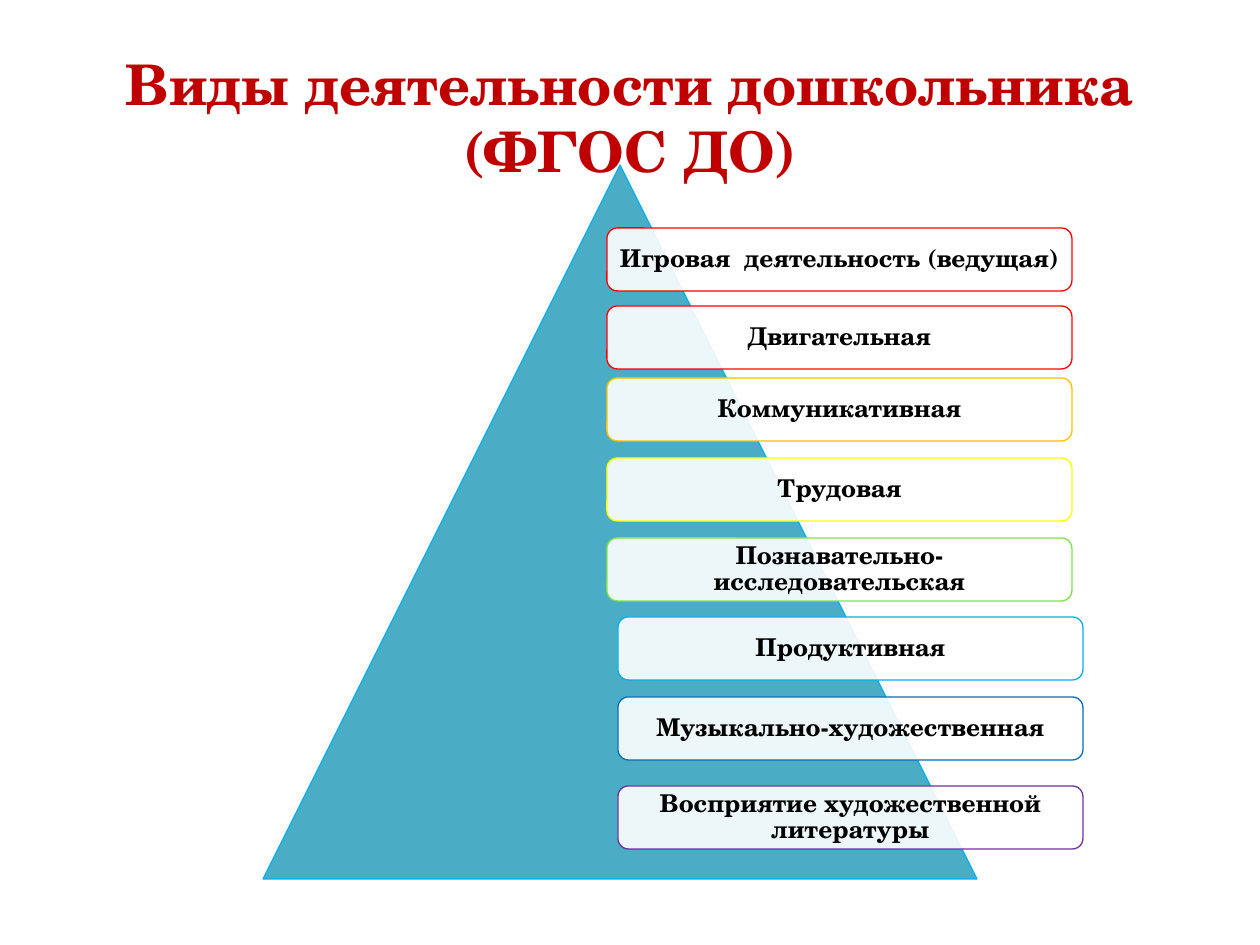
from lxml.etree import SubElement
from pptx import Presentation
from pptx.dml.color import RGBColor
from pptx.enum.shapes import MSO_SHAPE as Preset
from pptx.enum.text import MSO_ANCHOR as Anchor, PP_ALIGN as Align
from pptx.oxml.ns import qn
from pptx.util import Emu, Pt

PX_PER_INCH = 126
WHITE = RGBColor(0xFF, 0xFF, 0xFF)
BLACK = RGBColor(0x00, 0x00, 0x00)
CRIMSON = RGBColor(0xC0, 0x00, 0x00)
TEAL = RGBColor(0x4B, 0xAC, 0xC6)
RED = RGBColor(0xFF, 0x00, 0x00)
ORANGE = RGBColor(0xFF, 0xC0, 0x00)
YELLOW = RGBColor(0xFF, 0xFF, 0x00)
GREEN = RGBColor(0x80, 0xE4, 0x46)
SKY = RGBColor(0x00, 0xB0, 0xF0)
BLUE = RGBColor(0x00, 0x70, 0xC0)
PURPLE = RGBColor(0x70, 0x30, 0xA0)

UPPER_LEFT, LOWER_LEFT = 607, 618
ACTIVITIES = [
    ("Игровая  деятельность (ведущая)", UPPER_LEFT, 228, RED),
    ("Двигательная", UPPER_LEFT, 306, RED),
    ("Коммуникативная", UPPER_LEFT, 378, ORANGE),
    ("Трудовая", UPPER_LEFT, 458, YELLOW),
    ("Познавательно-исследовательская", UPPER_LEFT, 538, GREEN),
    ("Продуктивная", LOWER_LEFT, 617, SKY),
    ("Музыкально-художественная", LOWER_LEFT, 697, BLUE),
    ("Восприятие художественной литературы", LOWER_LEFT, 786, PURPLE),
]


def px(length):
    return Emu(round(length * 914400 / PX_PER_INCH))


def assign(target, values):
    for name, value in values.items():
        setattr(target, name, value)


class SlideBuilder:
    font = {"name": "TeX Gyre Schola", "bold": True}
    line_width = Pt(0.75)

    def __init__(self, slide):
        self.slide = slide

    def label(self, shape, text, size, color, frame_format, paragraph_format):
        frame = shape.text_frame
        assign(frame, {"word_wrap": True, "vertical_anchor": Anchor.MIDDLE, **frame_format})
        frame.text = text
        paragraph = frame.paragraphs[0]
        assign(paragraph, {"alignment": Align.CENTER, **paragraph_format})
        font = paragraph.runs[0].font
        assign(font, {**self.font, "size": Pt(size)})
        font.color.rgb = color

    def title(self, text, left, top, width, height):
        heading = self.slide.shapes.title
        bounds = {"left": left, "top": top, "width": width, "height": height}
        assign(heading, {side: px(length) for side, length in bounds.items()})
        self.label(heading, text, 32, CRIMSON, {}, {})

    def outline(self, preset, left, top, width, height, fill, line):
        shape = self.slide.shapes.add_shape(preset, px(left), px(top), px(width), px(height))
        shape.shadow.inherit = False
        shape.fill.solid()
        shape.fill.fore_color.rgb = fill
        shape.line.color.rgb = line
        shape.line.width = self.line_width
        return shape

    def pyramid(self, left, top, side):
        self.outline(Preset.ISOSCELES_TRIANGLE, left, top, side, side, TEAL, SKY)

    def activity(self, text, left, top, color):
        card = self.outline(Preset.ROUNDED_RECTANGLE, left, top, 465, 63, WHITE, color)
        fill_color = card.element.spPr.find(qn("a:solidFill"))[0]
        SubElement(fill_color, qn("a:alpha"), val="90000")
        sides = ("left", "top", "right", "bottom")
        margins = {f"margin_{side}": px(7) for side in sides}
        self.label(card, text, 14, BLACK, margins, {"line_spacing": 0.9})


def main():
    deck = Presentation()
    assign(deck, {"slide_width": px(1260), "slide_height": px(945)})
    builder = SlideBuilder(deck.slides.add_slide(deck.slide_layouts[5]))
    builder.title("Виды деятельности дошкольника (ФГОС ДО)", 63, 38, 1134, 158)
    builder.pyramid(263, 165, 714)
    for activity in ACTIVITIES:
        builder.activity(*activity)
    deck.save("out.pptx")


if __name__ == "__main__":
    main()
